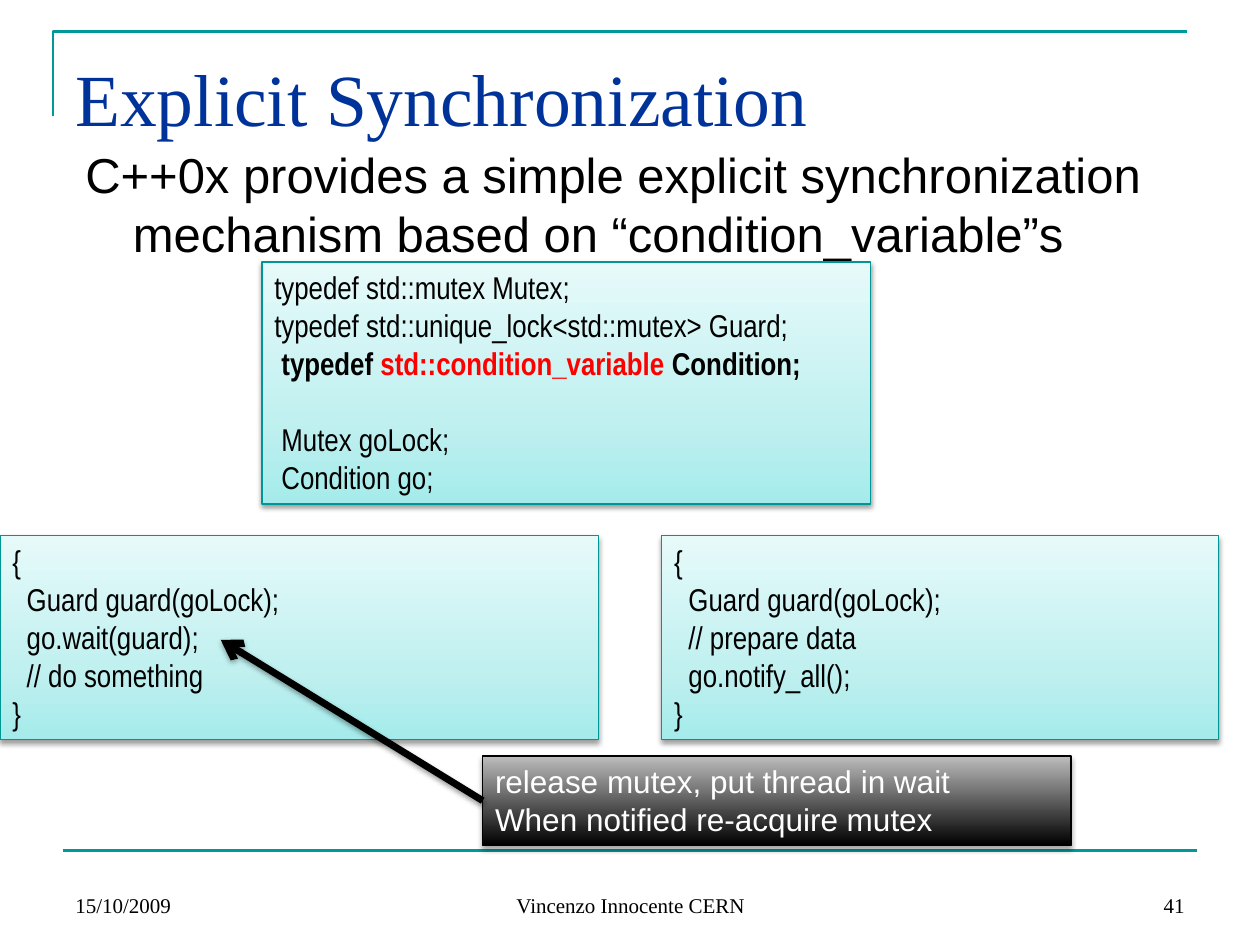
from dataclasses import dataclass
from typing import Any, NamedTuple

from lxml.etree import SubElement
from pptx import Presentation
from pptx.dml.color import RGBColor
from pptx.enum.shapes import MSO_CONNECTOR as Link, MSO_SHAPE as Shape
from pptx.enum.text import MSO_ANCHOR as Anchor, PP_ALIGN as Align
from pptx.oxml.ns import qn
from pptx.util import Cm, Pt

BLACK = RGBColor(0x00, 0x00, 0x00)
WHITE = RGBColor(0xFF, 0xFF, 0xFF)
RED = RGBColor(0xFF, 0x00, 0x00)
NAVY = RGBColor(0x00, 0x33, 0x99)
TEAL = RGBColor(0x00, 0x99, 0x99)
EDGE = RGBColor(0x00, 0x96, 0x96)
AQUA = ((0, RGBColor(0xA5, 0xEB, 0xEB)), (35, RGBColor(0xC1, 0xF0, 0xF0)),
        (100, RGBColor(0xE7, 0xFA, 0xFA)))
GREY = ((0, BLACK), (100, RGBColor(0xBD, 0xBD, 0xBD)))
SERIF, SANS, NARROW = "Times New Roman", "Arial", "Arial Narrow"
ROW = Pt(21.7)


class Rect(NamedTuple):
    """Left, top, width and height in centimetres."""
    x: float
    y: float
    w: float
    h: float


class Run(NamedTuple):
    text: str
    bold: bool = False
    color: RGBColor | None = None


@dataclass
class Line:
    runs: list[Run]
    gap: Any = None


@dataclass
class Panel:
    rect: Rect
    lines: list[Line]
    font: str = NARROW
    ink: RGBColor = BLACK
    stops: tuple = AQUA
    edge: RGBColor = EDGE
    alpha: int = 38
    drop: float = 1.6


@dataclass
class Label:
    rect: Rect
    text: str
    size: float = 12
    font: str = SERIF
    color: RGBColor = BLACK
    align: Align = Align.LEFT
    anchor: Anchor = Anchor.BOTTOM


def put(item: Any, **vals: Any) -> None:
    for name, val in vals.items():
        setattr(item, name, val)


def place(rect: Rect) -> list:
    return [Cm(v) for v in rect]


def plain(*texts: str) -> list[Line]:
    return [Line([Run(text)]) for text in texts]


def tint(node: Any, color: RGBColor) -> Any:
    return SubElement(node, qn("a:srgbClr"), val=str(color))


def stroke(line: Any, color: RGBColor, width: float) -> None:
    line.color.rgb = color
    line.width = Pt(width)


def shade(shape: Any, stops: tuple) -> None:
    """Fill with a gradient that runs from the bottom up."""
    shape.fill.gradient()
    shape.fill.gradient_angle = 90
    box = shape.element.spPr.find(qn("a:gradFill")).find(qn("a:gsLst"))
    for old in list(box):
        box.remove(old)
    for pos, color in stops:
        tint(SubElement(box, qn("a:gs"), pos=str(pos * 1000)), color)


def cast(item: Any, alpha: int, drop: float) -> None:
    """Give the item a soft shadow straight below it."""
    props = item.element.spPr
    holder = props.find(qn("a:effectLst"))
    if holder is None:
        holder = SubElement(props, qn("a:effectLst"))
    outer = SubElement(holder, qn("a:outerShdw"), blurRad=str(Pt(3.1)),
                       dist=str(Pt(drop)), dir="5400000", rotWithShape="0")
    SubElement(tint(outer, BLACK), qn("a:alpha"), val=str(alpha * 1000))


def draw_label(shapes: Any, label: Label) -> Any:
    frame = shapes.add_textbox(*place(label.rect)).text_frame
    put(frame, word_wrap=True, vertical_anchor=label.anchor)
    para = frame.paragraphs[0]
    para.alignment = label.align
    run = para.add_run()
    run.text = label.text
    put(run.font, name=label.font, size=Pt(label.size))
    run.font.color.rgb = label.color
    return para


def draw_panel(shapes: Any, panel: Panel) -> Any:
    shape = shapes.add_shape(Shape.RECTANGLE, *place(panel.rect))
    shape.shadow.inherit = False
    shade(shape, panel.stops)
    stroke(shape.line, panel.edge, 0.75)
    cast(shape, panel.alpha, panel.drop)
    frame = shape.text_frame
    put(frame, word_wrap=True, vertical_anchor=Anchor.TOP)
    for num, line in enumerate(panel.lines):
        para = frame.add_paragraph() if num else frame.paragraphs[0]
        put(para, alignment=Align.LEFT, line_spacing=ROW, space_before=line.gap)
        for part in line.runs:
            run = para.add_run()
            run.text = part.text
            put(run.font, name=panel.font, size=Pt(18), bold=part.bold)
            run.font.color.rgb = part.color or panel.ink
    return shape


def draw_rule(shapes: Any, start: tuple, end: tuple, color: RGBColor,
              width: float) -> Any:
    rule = shapes.add_connector(Link.STRAIGHT, *map(Cm, start + end))
    stroke(rule.line, color, width)
    SubElement(rule.element.spPr, qn("a:effectLst"))
    return rule


def draw_frame(shapes: Any) -> None:
    pen = shapes.build_freeform(Cm(1.07), Cm(2.34))
    pen.add_line_segments([(Cm(1.07), Cm(0.64)), (Cm(23.93), Cm(0.64))], close=False)
    frame = pen.convert_to_shape()
    frame.shadow.inherit = False
    frame.fill.background()
    stroke(frame.line, TEAL, 1.5)


TITLE = Label(Rect(1.27, 0.94, 22.86, 2.5), "Explicit Synchronization",
              42, SERIF, NAVY, anchor=Anchor.TOP)
BODY = Label(Rect(1.47, 2.79, 22.86, 2.74),
             "C++0x provides a simple explicit synchronization "
             "mechanism based on “condition_variable”s",
             28, SANS, anchor=Anchor.TOP)
FOOT = [
    Label(Rect(1.27, 17.35, 5.92, 1.27), "15/10/2009"),
    Label(Rect(8.69, 17.35, 8.05, 1.27), "Vincenzo Innocente CERN", align=Align.CENTER),
    Label(Rect(18.21, 17.35, 5.92, 1.27), "41", align=Align.RIGHT),
]
WAIT = Panel(Rect(0, 10.8, 12.07, 4.11), plain(
    "{", "  Guard guard(goLock);", "  go.wait(guard);", "  // do something", "}"))
NOTE = Panel(Rect(9.73, 15.24, 11.86, 1.8), plain(
    "release mutex, put thread in wait", "When notified re-acquire mutex"),
    SANS, WHITE, GREY, BLACK, 35, 1.8)
SEND = Panel(Rect(13.34, 10.8, 11.23, 4.11), plain(
    "{", "  Guard guard(goLock);", "  // prepare data", "  go.notify_all();", "}"))
TYPES = Panel(Rect(5.28, 5.28, 12.27, 4.88), [
    *plain("typedef std::mutex Mutex;", "typedef std::unique_lock<std::mutex> Guard;"),
    Line([Run(" "), Run("typedef ", True),
          Run("std::condition_variable ", True, RED), Run("Condition;", True)]),
    Line([Run(" Mutex goLock;")], gap=ROW),
    *plain(" Condition go;"),
])


def main() -> None:
    deck = Presentation()
    put(deck, slide_width=Cm(25.4), slide_height=Cm(19.05))
    shapes = deck.slides.add_slide(deck.slide_layouts[6]).shapes

    draw_frame(shapes)
    draw_rule(shapes, (1.27, 17.15), (24.13, 17.15), TEAL, 1.5)
    draw_label(shapes, TITLE)
    body = draw_label(shapes, BODY)
    body.line_spacing = Pt(33.8)
    indent = Cm(0.96)
    props = body._p.get_or_add_pPr()
    props.set("marL", str(indent))
    props.set("indent", str(-indent))
    for label in FOOT:
        draw_label(shapes, label)

    draw_panel(shapes, WAIT)
    note = draw_panel(shapes, NOTE)
    arrow = draw_rule(shapes, (9.73, 16.14), (4.45, 12.9), BLACK, 4)
    arrow.begin_connect(note, 1)
    SubElement(arrow.line._get_or_add_ln(), qn("a:tailEnd"), type="arrow")
    cast(arrow, 38, 1.6)
    draw_panel(shapes, SEND)
    draw_panel(shapes, TYPES)
    deck.save("out.pptx")


if __name__ == "__main__":
    main()
